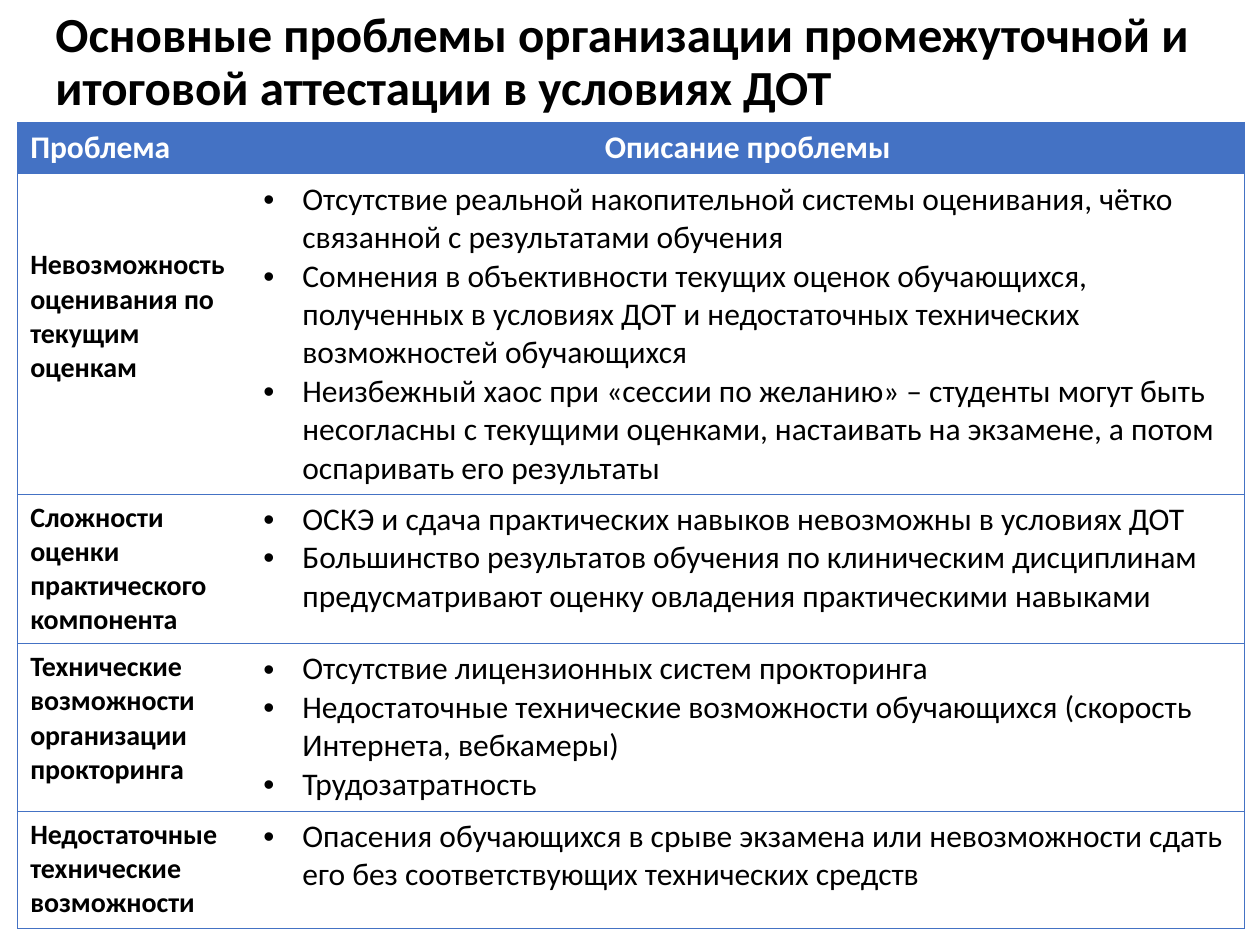
import pptx
import pptx.util
import pptx.dml.color
import pptx.enum.text
import pptx.oxml.ns
import lxml.etree

Inches = pptx.util.Inches
BLUE, WHITE, BLACK = "4472C4", "FFFFFF", "000000"
BORDER_WIDTH = pptx.util.Pt(0.5)


def color(value):
    return pptx.dml.color.RGBColor.from_string(value)


def add_text(paragraph, text, size, bold, text_color):
    run = paragraph.add_run()
    run.text = text
    run.font.name = "Calibri"
    run.font.size = pptx.util.Pt(size)
    run.font.bold = bold
    run.font.color.rgb = color(text_color)


presentation = pptx.Presentation()
presentation.slide_width = Inches(10)
presentation.slide_height = Inches(7.5)
slide = presentation.slides.add_slide(presentation.slide_layouts[5])

title = slide.shapes.title
title.left, title.top = Inches(0.34), Inches(0.2)
title.width, title.height = Inches(9.2), Inches(0.6)
title.text_frame.auto_size = pptx.enum.text.MSO_AUTO_SIZE.NONE
title.text_frame.vertical_anchor = pptx.enum.text.MSO_ANCHOR.MIDDLE
paragraph = title.text_frame.paragraphs[0]
paragraph.alignment = pptx.enum.text.PP_ALIGN.LEFT
paragraph.line_spacing = 0.9
add_text(paragraph, "Основные проблемы организации промежуточной и итоговой аттестации в условиях ДОТ", 28, True, BLACK)

headings = ["Проблема", "Описание проблемы"]
problems = [
    ("Невозможность оценивания по текущим оценкам", [
        "Отсутствие реальной накопительной системы оценивания, чётко связанной с результатами обучения",
        "Сомнения в объективности текущих оценок обучающихся, полученных в условиях ДОТ и недостаточных технических возможностей обучающихся",
        "Неизбежный хаос при «сессии по желанию» – студенты могут быть несогласны с текущими оценками, настаивать на экзамене, а потом оспаривать его результаты",
    ]),
    ("Сложности оценки практического компонента", [
        "ОСКЭ и сдача практических навыков невозможны в условиях ДОТ",
        "Большинство результатов обучения по клиническим дисциплинам предусматривают оценку овладения практическими навыками",
    ]),
    ("Технические возможности организации прокторинга", [
        "Отсутствие лицензионных систем прокторинга",
        "Недостаточные технические возможности обучающихся (скорость Интернета, вебкамеры)",
        "Трудозатратность",
    ]),
    ("Недостаточные технические возможности", [
        "Опасения обучающихся в срыве экзамена или невозможности сдать его без соответствующих технических средств",
    ]),
]
column_widths = [1.85, 7.89]
row_heights = [0.41, 2.54, 1.18, 1.33, 0.93]

table = slide.shapes.add_table(
    len(row_heights), len(column_widths), Inches(0.14), Inches(0.97),
    Inches(sum(column_widths)), Inches(sum(row_heights))).table
table.horz_banding = False
for column, width in zip(table.columns, column_widths):
    column.width = Inches(width)
for row, height in zip(table.rows, row_heights):
    row.height = Inches(height)

for row_index, row in enumerate(table.rows):
    for column_index, cell in enumerate(row.cells):
        properties = cell._tc.get_or_add_tcPr()
        inner_side = "R" if column_index == 0 else "L"
        for side in "LRTB":
            line = lxml.etree.SubElement(properties, pptx.oxml.ns.qn("a:ln" + side), w=str(BORDER_WIDTH))
            if side == inner_side:
                lxml.etree.SubElement(line, pptx.oxml.ns.qn("a:noFill"))
            else:
                fill = lxml.etree.SubElement(line, pptx.oxml.ns.qn("a:solidFill"))
                lxml.etree.SubElement(fill, pptx.oxml.ns.qn("a:srgbClr"), val=BLUE)
        cell.fill.solid()
        cell.fill.fore_color.rgb = color(BLUE if row_index == 0 else WHITE)

for column_index, heading in enumerate(headings):
    paragraph = table.cell(0, column_index).text_frame.paragraphs[0]
    add_text(paragraph, heading, 18, True, WHITE)
table.cell(0, 1).text_frame.paragraphs[0].alignment = pptx.enum.text.PP_ALIGN.CENTER

for row_index, (problem, descriptions) in enumerate(problems, start=1):
    add_text(table.cell(row_index, 0).text_frame.paragraphs[0], problem, 16, True, BLACK)
    text_frame = table.cell(row_index, 1).text_frame
    for index, description in enumerate(descriptions):
        paragraph = text_frame.add_paragraph() if index else text_frame.paragraphs[0]
        paragraph_properties = paragraph._p.get_or_add_pPr()
        paragraph_properties.set("marL", str(Inches(0.31)))
        paragraph_properties.set("indent", str(-Inches(0.31)))
        lxml.etree.SubElement(paragraph_properties, pptx.oxml.ns.qn("a:buFont"), typeface="Arial")
        lxml.etree.SubElement(paragraph_properties, pptx.oxml.ns.qn("a:buChar"), char="•")
        add_text(paragraph, description, 18, False, BLACK)

table.cell(1, 0).margin_top = Inches(0.59)

presentation.save("out.pptx")
